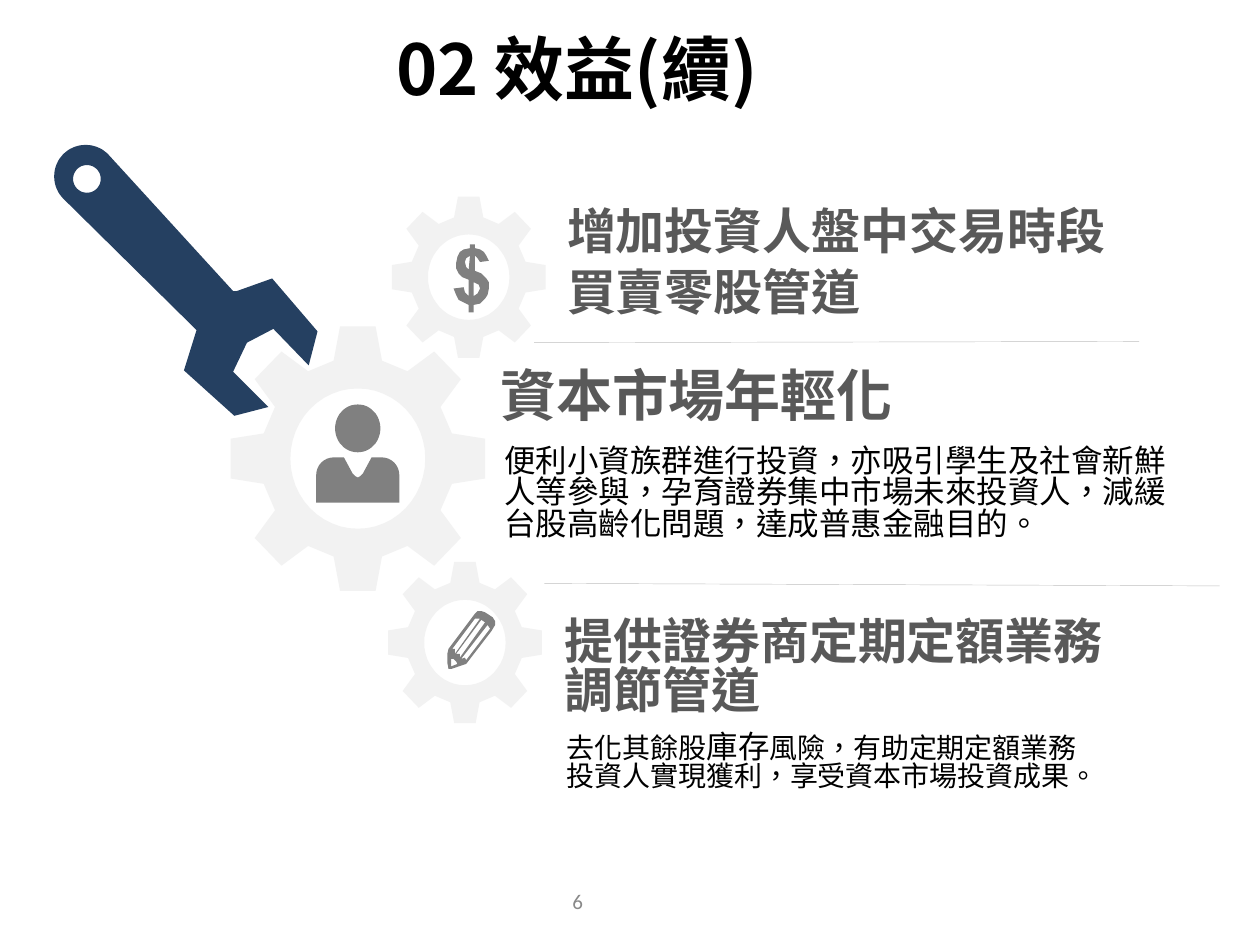
from math import cos, radians, sin

from lxml.etree import SubElement
from pptx import Presentation
from pptx.dml.color import RGBColor
from pptx.enum.shapes import MSO_CONNECTOR
from pptx.enum.text import MSO_ANCHOR, PP_ALIGN
from pptx.oxml.ns import qn
from pptx.util import Inches, Pt

NAVY = RGBColor(0x25, 0x40, 0x61)
PALE = RGBColor(0xF2, 0xF2, 0xF2)
GRAY = RGBColor(0x80, 0x80, 0x80)
HEADING = RGBColor(0x59, 0x59, 0x59)
BLACK = RGBColor(0, 0, 0)
RULE = RGBColor(0xBF, 0xBF, 0xBF)
NUMBER = RGBColor(0x89, 0x89, 0x89)
CJK = "Noto Sans CJK SC"
TIGHT = 0.83  # line spacing

TITLE = "02 效益(續)"
HEADINGS = [  # text, (left, top, width, height), size, line spacing, anchor
    ("增加投資人盤中交易時段買賣零股管道", (4.43, 1.53, 4.78, 1.06), 28, Pt(35), MSO_ANCHOR.TOP),
    ("資本市場年輕化", (3.9, 2.91, 4.41, 0.61), 32, TIGHT, MSO_ANCHOR.TOP),
    ("提供證券商定期定額業務調節管道", (4.41, 4.8, 4.45, 1.02), 28, TIGHT, MSO_ANCHOR.MIDDLE),
]
DETAILS = [  # spans of (text, size), (left, top, width, height)
    ([("便利小資族群進行投資，亦吸引學生及社會新鮮人等參與，孕育證券集中市場未來投資人，"
       "減緩台股高齡化問題，達成普惠金融目的。", 18)], (3.93, 3.51, 5.51, 1.2)),
    ([("去化其餘股", 16), ("庫存", 18),
      ("風險，有助定期定額業務投資人實現獲利，享受資本市場投資成果。", 16)],
     (4.43, 5.78, 4.23, 0.97)),
]
RULES = [(4.24, 2.72, 9.04, 2.71), (4.32, 4.63, 9.68, 4.65)]

GEARS = [  # centre x, centre y, half width, half height
    (3.69, 5.1, 0.61, 0.64), (3.72, 2.2, 0.61, 0.64), (2.84, 3.64, 1.01, 1.05)]
GEAR_HOLE = 0.53
# One quarter of a gear with a half size of 1; the rest is mirrored.
TEETH = [(0.14, 1), (0.19, 0.74), (0.39, 0.66), (0.6, 0.81),
         (0.81, 0.6), (0.65, 0.39), (0.74, 0.19), (1, 0.15)]

WRENCH_JAW = [
    (1.85, 2.31), (1.88, 2.31), (2.16, 2.21), (2.52, 2.63), (2.45, 2.9), (2.17, 2.61),
    (1.96, 2.72), (1.85, 2.95), (2.13, 3.23), (1.86, 3.3), (1.46, 2.94), (1.56, 2.62)]
COLLAR = [(2.73, 3.63), (2.8, 3.76), (2.82, 3.78), (2.84, 3.79), (2.86, 3.78),
          (2.88, 3.76), (2.95, 3.63)]
DOLLAR = [
    [(3.72, 2.35), (3.72, 2.22), (3.67, 2.2), (3.64, 2.17), (3.62, 2.13), (3.62, 2.09),
     (3.63, 2.04), (3.65, 2), (3.68, 1.98), (3.73, 1.97), (3.73, 1.94), (3.77, 1.94),
     (3.77, 1.97), (3.81, 1.98), (3.84, 2), (3.86, 2.03), (3.88, 2.07), (3.81, 2.08),
     (3.79, 2.05), (3.77, 2.03), (3.77, 2.15), (3.82, 2.17), (3.86, 2.21), (3.88, 2.24),
     (3.88, 2.29), (3.87, 2.34), (3.85, 2.37), (3.81, 2.41), (3.76, 2.42), (3.76, 2.48),
     (3.72, 2.48), (3.72, 2.42), (3.68, 2.4), (3.64, 2.38), (3.62, 2.34), (3.6, 2.29),
     (3.68, 2.28), (3.69, 2.32)],
    [(3.73, 2.03), (3.7, 2.05), (3.69, 2.08), (3.7, 2.12), (3.72, 2.14)],
    [(3.76, 2.35), (3.79, 2.33), (3.81, 2.29), (3.8, 2.26), (3.76, 2.24)],
]
PENCIL = [
    [(3.88, 4.88), (3.85, 4.86), (3.82, 4.85), (3.79, 4.85), (3.77, 4.87), (3.56, 5.15),
     (3.55, 5.19), (3.55, 5.26), (3.56, 5.31), (3.58, 5.31), (3.7, 5.27), (3.9, 5.01),
     (3.93, 4.96), (3.93, 4.93), (3.91, 4.9)],
    [(3.7, 5.24), (3.69, 5.22), (3.66, 5.23), (3.87, 4.96), (3.89, 4.99)],
    [(3.63, 5.27), (3.58, 5.29), (3.58, 5.23), (3.6, 5.23), (3.62, 5.25)],
    [(3.77, 4.91), (3.81, 4.91), (3.61, 5.19), (3.61, 5.15), (3.59, 5.15)],
    [(3.65, 5.22), (3.65, 5.19), (3.62, 5.19), (3.82, 4.92), (3.85, 4.94)],
]


def arc(x, y, radius_x, radius_y, start=0, sweep=360, steps=48):
    """Points on an ellipse, in degrees clockwise from the right."""
    angles = [radians(start + sweep * step / steps) for step in range(steps + 1)]
    return [(x + radius_x * cos(a), y + radius_y * sin(a)) for a in angles]


def gear(x, y, half_width, half_height):
    quarters = [(1, 1, 1), (1, -1, -1), (-1, -1, 1), (-1, 1, -1)]
    outline = [(x + sx * half_width * u, y + sy * half_height * v)
               for sx, sy, order in quarters for u, v in TEETH[::order]]
    return [outline, arc(x, y, half_width * GEAR_HOLE, half_height * GEAR_HOLE)]


def add_outline(page, contours, color):
    builder = None
    for contour in contours:
        points = [(x * 1000, y * 1000) for x, y in contour]
        if builder is None:
            builder = page.shapes.build_freeform(*points[0], scale=Inches(1) / 1000)
        else:
            builder.move_to(*points[0])
        builder.add_line_segments(points[1:], close=True)
    shape = builder.convert_to_shape()
    shape.shadow.inherit = False
    shape.fill.solid()
    shape.fill.fore_color.rgb = color
    shape.line.fill.background()


def place(box, area):
    box.left, box.top, box.width, box.height = map(Inches, area)


def write(box, spans, color=BLACK, font=CJK, bold=False, align=PP_ALIGN.LEFT,
          anchor=MSO_ANCHOR.TOP, spacing=None, insets=(0.07, 0.04)):
    frame = box.text_frame
    frame.word_wrap = True
    frame.vertical_anchor = anchor
    frame.margin_left = frame.margin_right = Inches(insets[0])
    frame.margin_top = frame.margin_bottom = Inches(insets[1])
    para = frame.paragraphs[0]
    para.alignment = align
    if spacing:
        para.line_spacing = spacing
    for text, size in spans:
        span = para.add_run()
        span.text = text
        span.font.size = Pt(size)
        span.font.bold = bold
        span.font.color.rgb = color
        span.font.name = font
        properties = span.font._element
        properties.set("lang", "zh-TW")
        SubElement(properties, qn("a:ea")).set("typeface", font)


def add_text(page, area, spans, **style):
    write(page.shapes.add_textbox(*map(Inches, area)), spans, **style)


def add_rule(page, ends):
    rule = page.shapes.add_connector(MSO_CONNECTOR.STRAIGHT, *map(Inches, ends))
    rule.line.color.rgb = RULE
    rule.line.width = Pt(0.25)
    SubElement(rule._element.spPr, qn("a:effectLst"))


def main():
    deck = Presentation()
    deck.slide_width, deck.slide_height = Inches(10), Inches(7.5)
    page = deck.slides.add_slide(deck.slide_layouts[5])

    place(page.shapes.title, (1.59, 0.18, 5.98, 0.71))
    write(page.shapes.title, [(TITLE, 40)], bold=True, align=PP_ALIGN.CENTER,
          anchor=MSO_ANCHOR.MIDDLE, insets=(0.1, 0.05))
    add_text(page, (3.42, 6.95, 2.33, 0.4), [("6", 12)], color=NUMBER, font="Calibri",
             align=PP_ALIGN.CENTER, anchor=MSO_ANCHOR.MIDDLE)

    for placement in GEARS:
        add_outline(page, gear(*placement), PALE)
    shoulders = (arc(2.65, 3.77, 0.14, 0.14, 180, 90, 8) + COLLAR
                 + arc(3.03, 3.77, 0.14, 0.14, 270, 90, 8) + [(3.17, 3.99), (2.51, 3.99)])
    add_outline(page, [arc(2.84, 3.4, 0.18, 0.19), shoulders], GRAY)
    handle = arc(0.68, 1.4, 0.25, 0.25, 135, 180)
    add_outline(page, [handle + WRENCH_JAW, arc(0.69, 1.42, 0.11, 0.11)], NAVY)
    add_outline(page, DOLLAR, GRAY)
    add_outline(page, PENCIL, GRAY)

    for text, area, size, spacing, anchor in HEADINGS:
        add_text(page, area, [(text, size)], color=HEADING, bold=True,
                 spacing=spacing, anchor=anchor)
    for spans, area in DETAILS:
        add_text(page, area, spans, spacing=TIGHT)
    for ends in RULES:
        add_rule(page, ends)
    deck.save("out.pptx")


if __name__ == "__main__":
    main()
